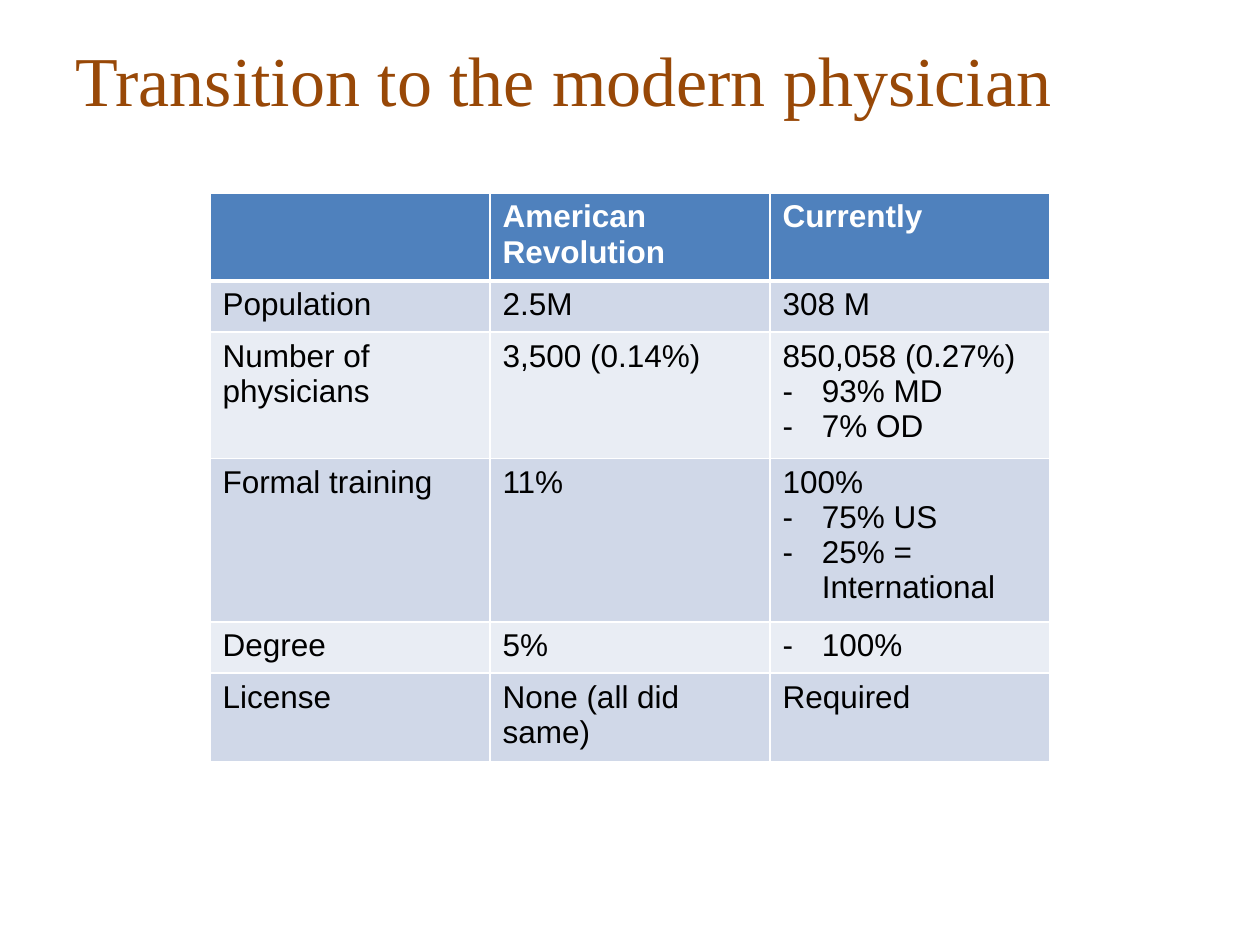
from dataclasses import dataclass

from lxml import etree
from pptx import Presentation
from pptx import util as u
from pptx.dml.color import RGBColor
from pptx.enum import text
from pptx.oxml.ns import qn

COLORS = {
    "title": "984807",
    "header": "4F81BD",
    "band_dark": "D0D8E8",
    "band_light": "E9EDF4",
    "white": "FFFFFF",
    "black": "000000",
}
COLUMN_WIDTH = u.Pt(160)
ROW_HEIGHT = u.Pt(29.2)
DASH_INDENT = u.Pt(22.5)
THIN, THICK = u.Pt(1), u.Pt(3)


@dataclass(frozen=True)
class Line:
    words: str
    dashed: bool = False


@dataclass(frozen=True)
class Row:
    topic: str
    revolution: str
    current: tuple[Line, ...]


ROWS = [
    Row("", "American Revolution", (Line("Currently"),)),
    Row("Population", "2.5M", (Line("308 M"),)),
    Row("Number of physicians", "3,500 (0.14%)",
        (Line("850,058 (0.27%)"), Line("93% MD", True), Line("7% OD", True))),
    Row("Formal training", "11%",
        (Line("100%"), Line("75% US", True), Line("25% = International", True))),
    Row("Degree", "5%", (Line("100%", True),)),
    Row("License", "None (all did same)", (Line("Required"),)),
]


def add_run(paragraph, words: str, font: str, size: float, color: str, bold: bool = False) -> None:
    run = paragraph.add_run()
    run.text = words
    run.font.name = font
    run.font.size = u.Pt(size)
    run.font.bold = bold
    run.font.color.rgb = RGBColor.from_string(COLORS[color])


def add_dash(paragraph) -> None:
    properties = paragraph._p.get_or_add_pPr()
    properties.set("marL", str(DASH_INDENT))
    properties.set("indent", str(-DASH_INDENT))
    etree.SubElement(properties, qn("a:buFont")).set("typeface", "Arial")
    etree.SubElement(properties, qn("a:buChar")).set("char", "-")


def set_borders(cell, top: int, bottom: int) -> None:
    properties = cell._tc.get_or_add_tcPr()
    sides = {"a:lnL": THIN, "a:lnR": THIN, "a:lnT": top, "a:lnB": bottom}
    # Borders have to stand before the cell's fill
    for position, (side, width) in enumerate(sides.items()):
        border = etree.Element(qn(side), w=str(width))
        fill = etree.SubElement(border, qn("a:solidFill"))
        etree.SubElement(fill, qn("a:srgbClr")).set("val", COLORS["white"])
        properties.insert(position, border)


def fill_cell(cell, lines: tuple[Line, ...], row_number: int) -> None:
    is_header = row_number == 0
    band = "header" if is_header else "band_dark" if row_number % 2 else "band_light"
    cell.fill.solid()
    cell.fill.fore_color.rgb = RGBColor.from_string(COLORS[band])
    set_borders(cell, THICK if row_number == 1 else THIN, THICK if is_header else THIN)
    for number, line in enumerate(lines):
        frame = cell.text_frame
        paragraph = frame.add_paragraph() if number else frame.paragraphs[0]
        if line.dashed:
            add_dash(paragraph)
        if line.words:
            add_run(paragraph, line.words, "Arial", 18, "white" if is_header else "black", is_header)


def add_title(slide, words: str) -> None:
    title = slide.shapes.add_textbox(u.Pt(36), u.Pt(0), u.Pt(648), u.Pt(90)).text_frame
    title.word_wrap = True
    title.vertical_anchor = text.MSO_ANCHOR.MIDDLE
    add_run(title.paragraphs[0], words, "Times New Roman", 40, "title")


def add_comparison(slide, rows: list[Row]) -> None:
    comparison = slide.shapes.add_table(
        len(rows), 3, u.Pt(120), u.Pt(110.2), 3 * COLUMN_WIDTH, len(rows) * ROW_HEIGHT
    ).table
    for column in comparison.columns:
        column.width = COLUMN_WIDTH
    for row_number, row in enumerate(rows):
        comparison.rows[row_number].height = ROW_HEIGHT
        contents = ((Line(row.topic),), (Line(row.revolution),), row.current)
        for column_number, lines in enumerate(contents):
            fill_cell(comparison.cell(row_number, column_number), lines, row_number)


def main() -> None:
    deck = Presentation()
    deck.slide_width, deck.slide_height = u.Pt(720), u.Pt(540)
    slide = deck.slides.add_slide(deck.slide_layouts[6])
    # Heading
    add_title(slide, "Transition to the modern physician")
    # Physicians then and now
    add_comparison(slide, ROWS)
    deck.save("out.pptx")


if __name__ == "__main__":
    main()
